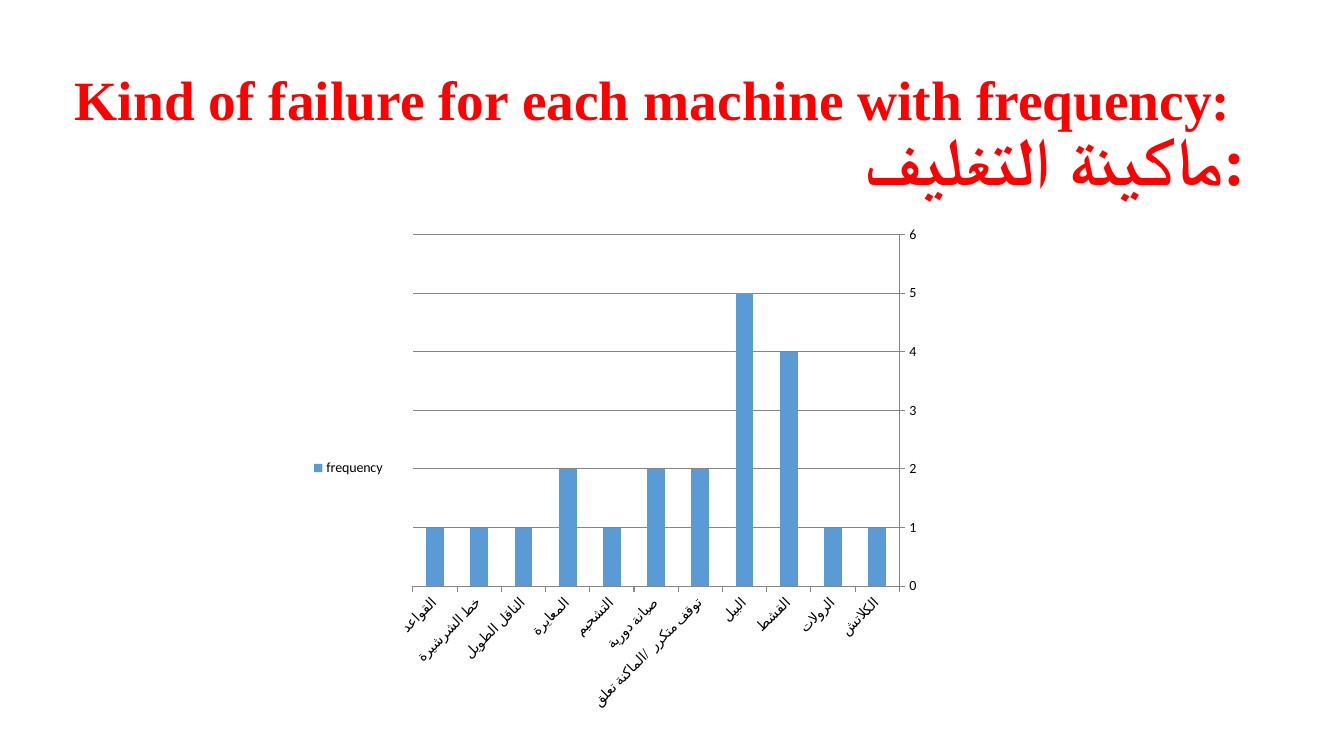
import pptx
import pptx.chart.data
import pptx.dml.color
import pptx.enum.chart
import pptx.enum.text
import pptx.util

Cm, Pt = pptx.util.Cm, pptx.util.Pt
RGBColor = pptx.dml.color.RGBColor
PP_ALIGN = pptx.enum.text.PP_ALIGN

RED = RGBColor(0xFF, 0x00, 0x00)
BLUE = RGBColor(0x5B, 0x9B, 0xD5)
GRAY = RGBColor(0x86, 0x86, 0x86)
BLACK = RGBColor(0x00, 0x00, 0x00)

FAILURES = [
    ("الكلاتش", 1),
    ("الرولات", 1),
    ("القشط", 4),
    ("البيل", 5),
    ("توقف متكرر  /الماكنة تعلق", 2),
    ("صيانة دورية", 2),
    ("التشحيم", 1),
    ("المعايرة", 2),
    ("الناقل الطويل", 1),
    ("خط الشرشيرة", 1),
    ("القواعد", 1),
]


def write_text(sp, text, size, align=PP_ALIGN.LEFT, before=0, top=0.13, right=0.25):
    tf = sp.text_frame
    tf.word_wrap = True
    tf.auto_size = pptx.enum.text.MSO_AUTO_SIZE.NONE
    tf.vertical_anchor = pptx.enum.text.MSO_ANCHOR.TOP
    tf.margin_top, tf.margin_right = Cm(top), Cm(right)
    p = tf.paragraphs[0]
    p.alignment, p.line_spacing, p.space_before = align, 0.9, Pt(before)
    r = p.add_run()
    r.text = text
    r.font.name, r.font.size, r.font.bold = "Times New Roman", Pt(size), True
    r.font.color.rgb = RED


def add_title(s, x, y, w, h):
    sp = s.shapes.title
    sp.left, sp.top, sp.width, sp.height = Cm(x), Cm(y), Cm(w), Cm(h)
    write_text(sp, "Kind of failure for each machine with frequency:", 39.6, top=0.39)


def add_machine_name(s, x, y, w, h):
    sp = s.shapes.add_textbox(Cm(x), Cm(y), Cm(w), Cm(h))
    write_text(sp, "ماكينة التغليف:", 48, align=PP_ALIGN.RIGHT, before=10, right=0.5)


def add_failure_chart(s, x, y, w, h):
    data = pptx.chart.data.CategoryChartData()
    data.categories = [name for name, _ in FAILURES]
    data.add_series("frequency", [count for _, count in FAILURES])
    chart = s.shapes.add_chart(
        pptx.enum.chart.XL_CHART_TYPE.COLUMN_CLUSTERED,
        Cm(x), Cm(y), Cm(w), Cm(h), data).chart
    chart.has_title = False
    chart.font.name, chart.font.size = "Calibri", Pt(10)
    chart.font.color.rgb = BLACK

    # Columns
    plot = chart.plots[0]
    plot.gap_width = 150
    plot.vary_by_categories = False
    fill = plot.series[0].format.fill
    fill.solid()
    fill.fore_color.rgb = BLUE

    # Axes: categories run right to left, labels slant upwards
    cat, val = chart.category_axis, chart.value_axis
    for axis in (cat, val):
        axis.major_tick_mark = pptx.enum.chart.XL_TICK_MARK.OUTSIDE
        axis.format.line.color.rgb = GRAY
        axis.tick_labels.font.size = Pt(10)
    cat.reverse_order = True
    cat._element.txPr.bodyPr.set("rot", "-2700000")
    val.minimum_scale, val.maximum_scale, val.major_unit = 0, 6, 1
    val.has_major_gridlines = True
    val.major_gridlines.format.line.color.rgb = GRAY

    # Legend
    chart.has_legend = True
    chart.legend.position = pptx.enum.chart.XL_LEGEND_POSITION.LEFT
    chart.legend.include_in_layout = False


def main():
    prs = pptx.Presentation()
    prs.slide_width, prs.slide_height = Cm(33.87), Cm(19.05)
    s = prs.slides.add_slide(prs.slide_layouts[5])
    add_title(s, 1.63, 1.45, 29.9, 3.68)
    add_machine_name(s, 2.69, 3.07, 29.21, 13.23)
    add_failure_chart(s, 7.59, 5.46, 15.82, 12.67)
    prs.save("out.pptx")


if __name__ == "__main__":
    main()
